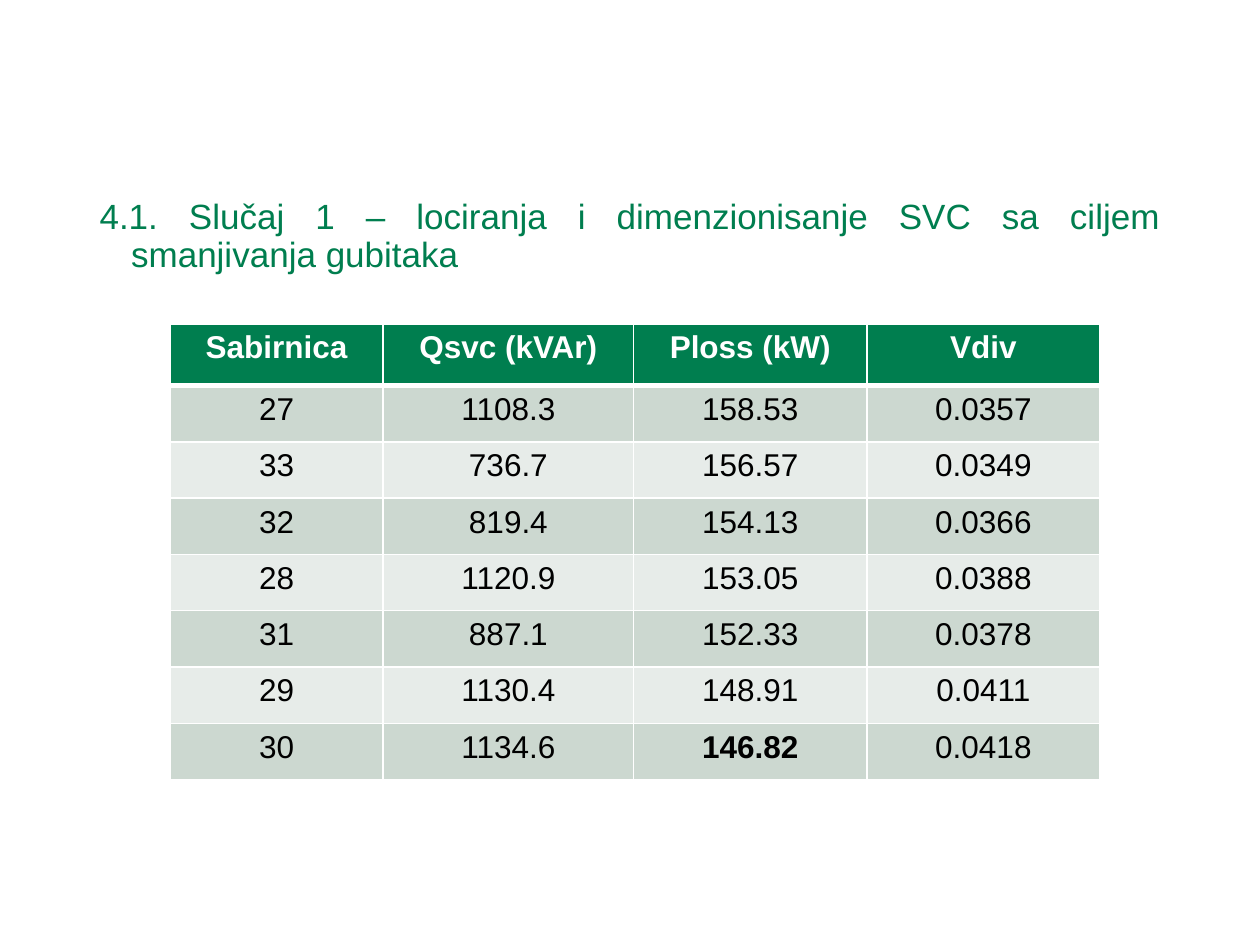
"""Build the slide on SVC placement and sizing for loss reduction."""
import dataclasses

import pptx
import pptx.dml.color
import pptx.enum.text
import pptx.oxml.ns
import pptx.util
from lxml import etree

ALIGN = pptx.enum.text.PP_ALIGN


@dataclasses.dataclass(frozen=True)
class Theme:
    font: str = "Arial"
    green: str = "007E4F"
    white: str = "FFFFFF"
    black: str = "000000"
    bands: tuple = ("CCD8D0", "E7ECE9")
    heading_size: int = 20
    table_size: int = 18
    thin: int = 1
    thick: int = 3


class SlideBuilder:
    columns, rows = 100, 75

    def __init__(self, deck, theme):
        self.theme = theme
        self.unit_x = deck.slide_width / self.columns
        self.unit_y = deck.slide_height / self.rows
        self.page = deck.slides.add_slide(deck.slide_layouts[1])
        title = self.page.shapes.title
        title.element.getparent().remove(title.element)

    def across(self, columns):
        return pptx.util.Emu(round(columns * self.unit_x))

    def down(self, rows):
        return pptx.util.Emu(round(rows * self.unit_y))

    def frame(self, left, top, width, height):
        return self.across(left), self.down(top), self.across(width), self.down(height)

    def apply(self, target, values):
        for name, value in values.items():
            setattr(target, name, value)

    def add_span(self, para, text, size, color, bold=False):
        span = para.add_run()
        span.text = text
        self.apply(span.font, {"name": self.theme.font, "size": pptx.util.Pt(size), "bold": bold})
        span.font.color.rgb = pptx.dml.color.RGBColor.from_string(color)

    def body(self, text, area, indent):
        box = self.page.placeholders[1]
        self.apply(box, dict(zip(("left", "top", "width", "height"), self.frame(*area))))
        para = box.text_frame.paragraphs[0]
        properties = para._p.get_or_add_pPr()
        properties.set("marL", str(self.across(indent)))
        properties.set("indent", str(-self.across(indent)))
        etree.SubElement(properties, pptx.oxml.ns.qn("a:buNone"))
        self.apply(para, {"alignment": ALIGN.JUSTIFY, "line_spacing": 0.9,
                          "space_before": pptx.util.Pt(0)})
        self.add_span(para, text, self.theme.heading_size, self.theme.green)

    def border(self, cell, side, points):
        properties = cell._tc.get_or_add_tcPr()
        line = etree.SubElement(properties, pptx.oxml.ns.qn(f"a:ln{side}"),
                                w=str(pptx.util.Pt(points)))
        fill = etree.SubElement(line, pptx.oxml.ns.qn("a:solidFill"))
        etree.SubElement(fill, pptx.oxml.ns.qn("a:srgbClr"), val=self.theme.white)

    def cell(self, cell, text, row, bold):
        theme = self.theme
        header = row == 0
        thick_side = {0: "B", 1: "T"}.get(row)
        for side in "LRTB":
            self.border(cell, side, theme.thick if side == thick_side else theme.thin)
        cell.fill.solid()
        color = theme.green if header else theme.bands[(row - 1) % 2]
        cell.fill.fore_color.rgb = pptx.dml.color.RGBColor.from_string(color)
        para = cell.text_frame.paragraphs[0]
        para.alignment = ALIGN.CENTER
        self.add_span(para, text, theme.table_size, theme.white if header else theme.black, bold)

    def table(self, records, left, top, widths, header_height, row_height, strong):
        heights = [header_height] + [row_height] * (len(records) - 1)
        area = self.frame(left, top, sum(widths), sum(heights))
        table = self.page.shapes.add_table(len(records), len(widths), *area).table
        for column, width in zip(table.columns, widths):
            column.width = self.across(width)
        for line, height in zip(table.rows, heights):
            line.height = self.down(height)
        for row, record in enumerate(records):
            for column, text in enumerate(record):
                bold = row == 0 or text == strong
                self.cell(table.cell(row, column), text, row, bold)


RESULTS = [
    ("Sabirnica", "Qsvc (kVAr)", "Ploss (kW)", "Vdiv"),
    ("27", "1108.3", "158.53", "0.0357"),
    ("33", "736.7", "156.57", "0.0349"),
    ("32", "819.4", "154.13", "0.0366"),
    ("28", "1120.9", "153.05", "0.0388"),
    ("31", "887.1", "152.33", "0.0378"),
    ("29", "1130.4", "148.91", "0.0411"),
    ("30", "1134.6", "146.82", "0.0418"),
]


def main():
    deck = pptx.Presentation()
    deck.slide_width = pptx.util.Inches(10)
    deck.slide_height = pptx.util.Inches(7.5)
    builder = SlideBuilder(deck, Theme())
    builder.body("4.1. Slučaj 1 – lociranja i dimenzionisanje SVC sa ciljem smanjivanja gubitaka",
                 area=(6.9, 15.3, 86.2, 47.6), indent=2.5)
    builder.table(RESULTS, left=13.5, top=25.7, widths=(16.9, 19.9, 18.5, 18.5),
                  header_height=4.9, row_height=4.47, strong="146.82")
    deck.save("out.pptx")


if __name__ == "__main__":
    main()
